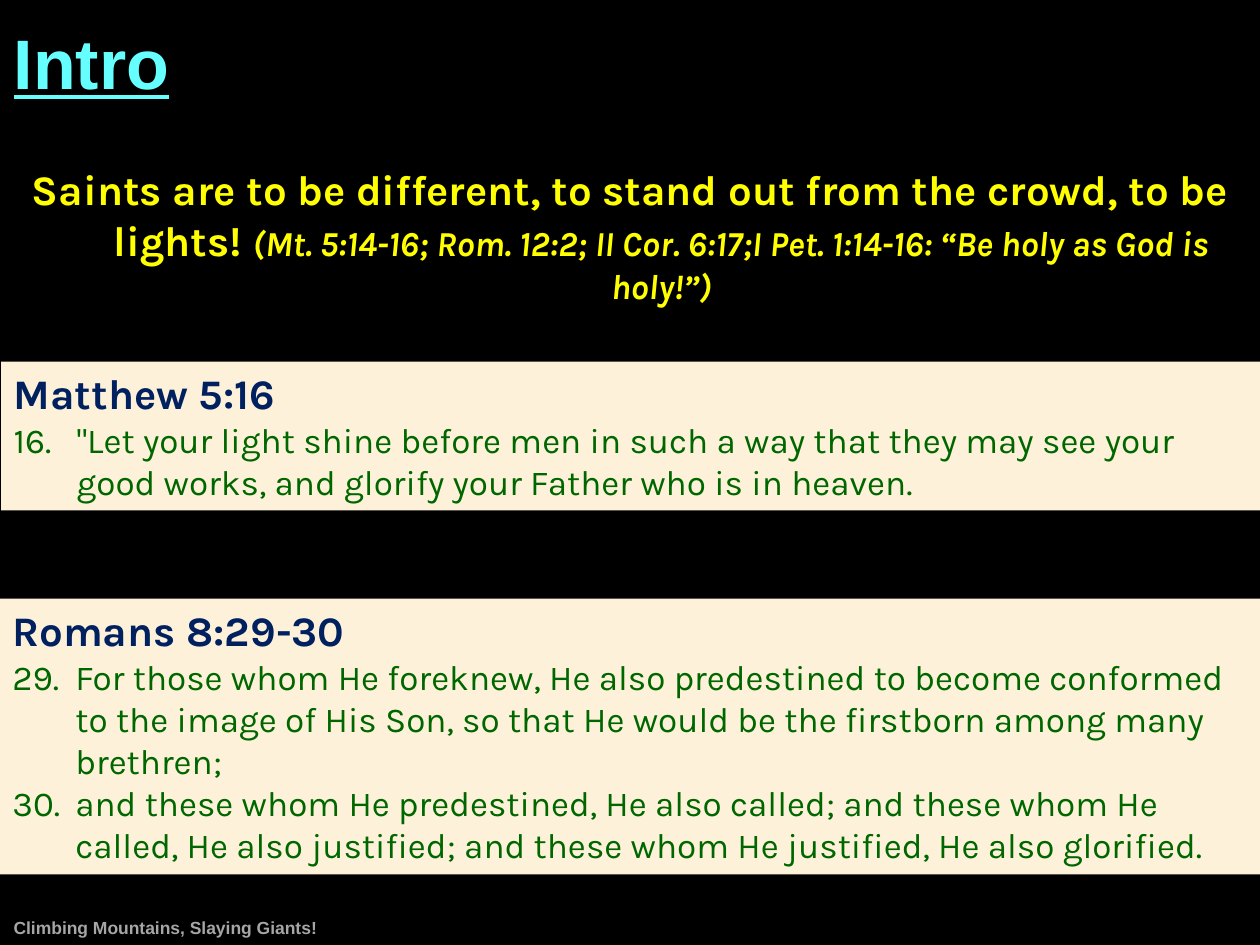
import pptx
import pptx.util
import pptx.dml.color
import pptx.enum.text
import pptx.enum.shapes

Inches = pptx.util.Inches
Align = pptx.enum.text.PP_ALIGN
Anchor = pptx.enum.text.MSO_ANCHOR
Fit = pptx.enum.text.MSO_AUTO_SIZE

TITLE = "Intro"
FOOTER = "Climbing Mountains, Slaying Giants!"
POINT = "Saints are to be different, to stand out from the crowd, to be lights! "
REFS = "(Mt. 5:14-16; Rom. 12:2; II Cor. 6:17;I Pet. 1:14-16: “Be holy as God is holy!”)"
# Each passage: place, heading, numbered verses
PASSAGES = [
    ((0.01, 2.87, 10, 1.18), "Matthew 5:16", [
        ("16.", "\"Let your light shine before men in such a way that they may see "
                "your good works, and glorify your Father who is in heaven."),
    ]),
    ((0, 4.75, 10, 2.19), "Romans 8:29-30", [
        ("29.", "For those whom He foreknew, He also predestined to become conformed "
                "to the image of His Son, so that He would be the firstborn among "
                "many brethren;"),
        ("30.", "and these whom He predestined, He also called; and these whom He "
                "called, He also justified; and these whom He justified, He also "
                "glorified."),
    ]),
]

THEME = {
    "back": "000000", "panel": "FDF2D9",
    "title": dict(size=40, font="Arial", color="66FFFF", bold=True, line=True),
    "footer": dict(size=10, font="Arial", color="A6A6A6", bold=True),
    "point": dict(size=24, font="Karla", color="FFFF00", bold=True),
    "refs": dict(size=20, font="Karla", color="FFFF00", bold=True, italic=True),
    "head": dict(size=24, font="Karla", color="002060", bold=True),
    "verse": dict(size=20, font="Karla", color="006600"),
}
HANG = 0.5


def rgb(code):
    return pptx.dml.color.RGBColor.from_string(code)


def write(para, text, size, font, color, bold=False, italic=False, line=False):
    """Add one formatted run to a paragraph."""
    run = para.add_run()
    run.text = text
    face = run.font
    face.size, face.name = pptx.util.Pt(size), font
    face.bold, face.italic, face.underline = bold, italic, line
    face.color.rgb = rgb(color)


def hang(para, align=Align.LEFT):
    """Align a paragraph and give it a hanging indent."""
    para.alignment = align
    props = para._p.get_or_add_pPr()
    props.set("marL", str(Inches(HANG)))
    props.set("indent", str(-Inches(HANG)))
    return para


def setup(shape, anchor=Anchor.TOP, fit=Fit.NONE):
    frame = shape.text_frame
    frame.word_wrap = True
    frame.auto_size = fit
    frame.vertical_anchor = anchor
    return frame


def place(shape, *box):
    shape.left, shape.top, shape.width, shape.height = map(Inches, box)


def add_box(slide, *box):
    return slide.shapes.add_textbox(*map(Inches, box))


def add_panel(slide, box, head, verses):
    panel = slide.shapes.add_shape(
        pptx.enum.shapes.MSO_SHAPE.RECTANGLE, *map(Inches, box))
    panel.shadow.inherit = False
    panel.fill.solid()
    panel.fill.fore_color.rgb = rgb(THEME["panel"])
    panel.line.fill.background()
    frame = setup(panel, fit=Fit.SHAPE_TO_FIT_TEXT)
    write(hang(frame.paragraphs[0]), head, **THEME["head"])
    for number, verse in verses:
        write(hang(frame.add_paragraph()), f"{number}\t{verse}", **THEME["verse"])


def main():
    deck = pptx.Presentation()
    deck.slide_width, deck.slide_height = Inches(10), Inches(7.5)
    slide = deck.slides.add_slide(deck.slide_layouts[5])
    slide.background.fill.solid()
    slide.background.fill.fore_color.rgb = rgb(THEME["back"])

    title = slide.shapes.title
    place(title, 0.01, 0.02, 10, 0.85)
    para = setup(title, Anchor.BOTTOM).paragraphs[0]
    para.alignment = Align.LEFT
    write(para, TITLE, **THEME["title"])

    foot = setup(add_box(slide, 0.01, 7.25, 4, 0.25), Anchor.MIDDLE).paragraphs[0]
    foot.line_spacing = 0.9
    write(foot, FOOTER, **THEME["footer"])

    frame = setup(add_box(slide, 0, 1.25, 10, 1.25), fit=Fit.SHAPE_TO_FIT_TEXT)
    point = hang(frame.paragraphs[0], Align.CENTER)
    write(point, POINT, **THEME["point"])
    write(point, REFS, **THEME["refs"])

    for passage in PASSAGES:
        add_panel(slide, *passage)
    deck.save("out.pptx")


if __name__ == "__main__":
    main()
